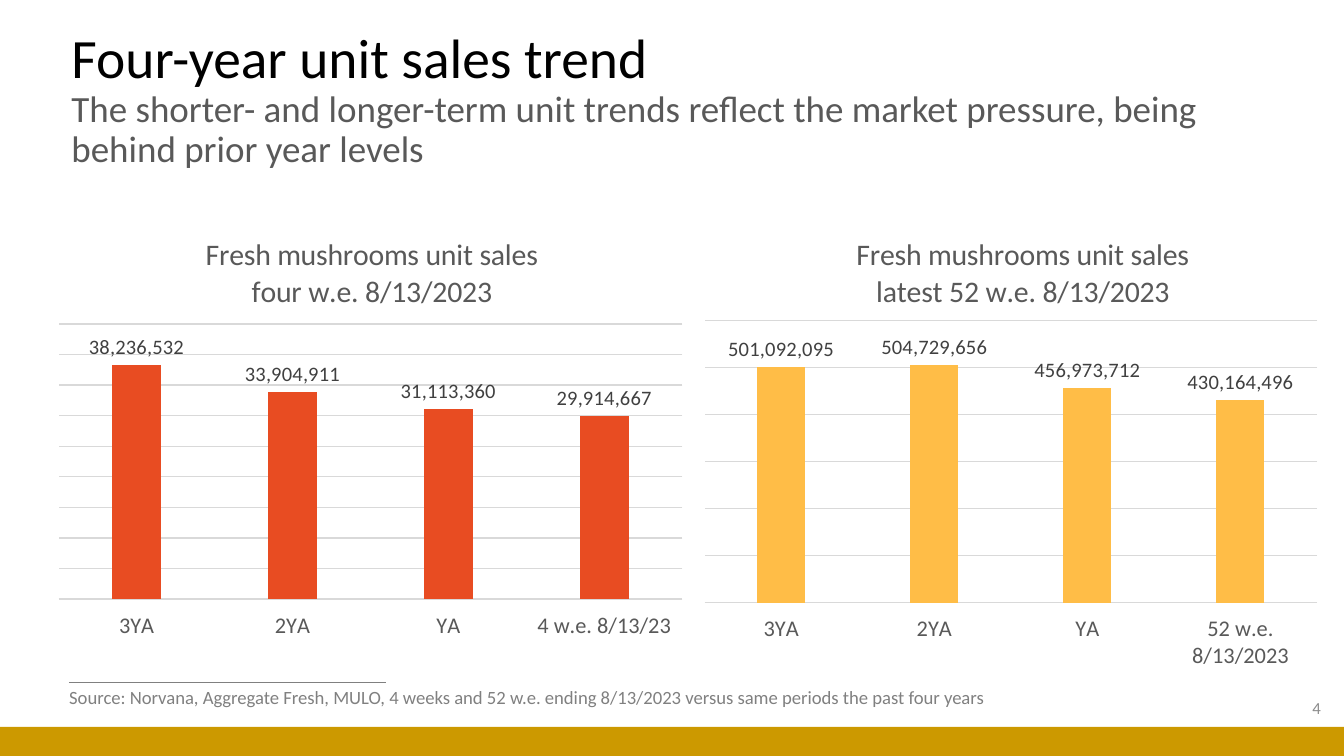
"""Build the four-year mushroom unit sales slide with two column charts."""
from dataclasses import dataclass

from lxml.etree import SubElement
from pptx import Presentation
from pptx.chart.data import CategoryChartData
from pptx.dml.color import RGBColor
from pptx.enum.chart import XL_CHART_TYPE, XL_LABEL_POSITION, XL_TICK_LABEL_POSITION, XL_TICK_MARK
from pptx.enum.shapes import MSO_CONNECTOR, MSO_SHAPE
from pptx.enum.text import MSO_ANCHOR, MSO_AUTO_SIZE, PP_ALIGN
from pptx.oxml.ns import qn
from pptx.util import Emu, Pt

TITLE = "Four-year unit sales trend"
SUBTITLE = ("The shorter- and longer-term unit trends reflect the market pressure, "
            "being behind prior year levels")
SOURCE = ("Source: Norvana, Aggregate Fresh, MULO, 4 weeks and 52 w.e. ending 8/13/2023 "
          "versus same periods the past four years")
PAGE_NUMBER = "4"
CHARTS = [
    {"title": "Fresh mushrooms unit sales\nfour w.e. 8/13/2023",
     "categories": ["3YA", "2YA", "YA", "4 w.e. 8/13/23"],
     "values": [38236532, 33904911, 31113360, 29914667],
     "color": "E84C22", "maximum": 45_000_000, "step": 5_000_000,
     "box": (58, 208, 625, 445), "plot": (58, 324, 625, 275), "title_at": (201, 231)},
    {"title": "Fresh mushrooms unit sales\nlatest 52 w.e. 8/13/2023",
     "categories": ["3YA", "2YA", "YA", "52 w.e. 8/13/2023"],
     "values": [501092095, 504729656, 456973712, 430164496],
     "color": "FFBD47", "maximum": 600_000_000, "step": 100_000_000,
     "box": (704, 208, 634, 470), "plot": (704, 321, 613, 282), "title_at": (852, 231)},
]


@dataclass(frozen=True)
class Theme:
    """Fonts, colours and type sizes of the slide."""
    font: str = "Calibri"
    title: str = "000000"
    muted: str = "595959"
    label: str = "404040"
    source: str = "808080"
    number: str = "8C8C8C"
    grid: str = "D9D9D9"
    band: str = "CC9900"
    title_size: float = 29.7
    subtitle_size: float = 19.8
    chart_title_size: int = 16
    axis_size: int = 12
    label_size: int = 11
    source_size: int = 10
    number_size: int = 9


THEME = Theme()
EMU_PER_PX = 914400 / 134.4


def px(*lengths):
    return [Emu(round(length * EMU_PER_PX)) for length in lengths]


def style_font(font, size, color):
    font.name = THEME.font
    font.size = Pt(size)
    font.bold = False
    font.color.rgb = RGBColor.from_string(color)


def style_line(line, color, width):
    line.color.rgb = RGBColor.from_string(color)
    line.width = Pt(width)


def add_title(slide):
    title = slide.shapes.title
    title.left, title.top, title.width, title.height = px(58, 48, 1218, 106)
    frame = title.text_frame
    frame.text = f"{TITLE}\v{SUBTITLE}"
    frame.word_wrap = True
    frame.auto_size = MSO_AUTO_SIZE.NONE
    frame.vertical_anchor = MSO_ANCHOR.MIDDLE
    paragraph = frame.paragraphs[0]
    paragraph.alignment = PP_ALIGN.LEFT
    paragraph.line_spacing = 0.9
    heading, subtitle = paragraph.runs
    style_font(heading.font, THEME.title_size, THEME.title)
    style_font(subtitle.font, THEME.subtitle_size, THEME.muted)
    line_break = paragraph._p.find(qn("a:br"))
    SubElement(line_break, qn("a:rPr"), sz=str(round(THEME.title_size * 100)))


def add_label(slide, box, text, size, color, alignment, anchor):
    frame = slide.shapes.add_textbox(*px(*box)).text_frame
    frame.text = text
    frame.word_wrap = True
    frame.vertical_anchor = anchor
    frame.paragraphs[0].alignment = alignment
    style_font(frame.paragraphs[0].runs[0].font, size, color)


def add_footer(slide):
    rule = slide.shapes.add_connector(MSO_CONNECTOR.STRAIGHT, *px(69, 683, 386, 683))
    style_line(rule.line, THEME.source, 0.5)
    SubElement(rule._element.spPr, qn("a:effectLst"))
    band = slide.shapes.add_shape(MSO_SHAPE.RECTANGLE, *px(0, 727, 1344, 29))
    band.shadow.inherit = False
    band.fill.solid()
    band.fill.fore_color.rgb = RGBColor.from_string(THEME.band)
    band.line.fill.background()
    add_label(slide, (1032, 688, 302, 40), PAGE_NUMBER, THEME.number_size, THEME.number,
              PP_ALIGN.RIGHT, MSO_ANCHOR.MIDDLE)
    add_label(slide, (56, 679, 954, 36), SOURCE, THEME.source_size, THEME.source,
              PP_ALIGN.LEFT, MSO_ANCHOR.TOP)


def place_in_chart(element, index, settings):
    for layout in element.findall(qn("c:layout")):
        element.remove(layout)
    layout = element.makeelement(qn("c:layout"))
    element.insert(index, layout)
    manual = SubElement(layout, qn("c:manualLayout"))
    for tag, value in settings.items():
        SubElement(manual, qn(f"c:{tag}"), val=str(value))


def relative_place(area, box):
    left, top, width, height = box
    place = {"xMode": "edge", "yMode": "edge",
             "x": round((area[0] - left) / width, 3), "y": round((area[1] - top) / height, 3)}
    if len(area) == 4:
        place |= {"w": round(area[2] / width, 3), "h": round(area[3] / height, 3)}
    return place


def add_sales_chart(slide, content):
    data = CategoryChartData(number_format="#,##0")
    data.categories = content["categories"]
    data.add_series("Series 1", content["values"])
    box = content["box"]
    chart = slide.shapes.add_chart(XL_CHART_TYPE.COLUMN_CLUSTERED, *px(*box), data).chart
    style_font(chart.font, THEME.source_size, THEME.title)
    chart.has_legend = False
    chart.has_title = True
    chart.chart_title.text_frame.text = content["title"]
    for paragraph in chart.chart_title.text_frame.paragraphs:
        paragraph.alignment = PP_ALIGN.CENTER
        style_font(paragraph.runs[0].font, THEME.chart_title_size, THEME.muted)

    category_axis = chart.category_axis
    category_axis.major_tick_mark = XL_TICK_MARK.NONE
    category_axis.tick_label_position = XL_TICK_LABEL_POSITION.LOW
    style_font(category_axis.tick_labels.font, THEME.axis_size, THEME.muted)
    style_line(category_axis.format.line, THEME.grid, 0.75)

    value_axis = chart.value_axis
    value_axis.visible = False
    value_axis.minimum_scale = 0
    value_axis.maximum_scale = content["maximum"]
    value_axis.major_unit = content["step"]
    value_axis.has_major_gridlines = True
    style_line(value_axis.major_gridlines.format.line, THEME.grid, 0.75)

    plot = chart.plots[0]
    plot.gap_width = 219
    plot.overlap = -27
    plot.vary_by_categories = False
    series = plot.series[0]
    series.format.fill.solid()
    series.format.fill.fore_color.rgb = RGBColor.from_string(content["color"])
    labels = series.data_labels
    labels.show_value = True
    labels.position = XL_LABEL_POSITION.OUTSIDE_END
    labels.number_format = "#,##0"
    labels.number_format_is_linked = False
    style_font(labels.font, THEME.label_size, THEME.label)

    root = chart._chartSpace
    place_in_chart(root.find(f".//{qn('c:title')}"), 1, relative_place(content["title_at"], box))
    place_in_chart(root.find(f".//{qn('c:plotArea')}"), 0,
                   {"layoutTarget": "inner"} | relative_place(content["plot"], box))


def main():
    presentation = Presentation()
    presentation.slide_width, presentation.slide_height = px(1344, 756)
    slide = presentation.slides.add_slide(presentation.slide_layouts[5])
    add_title(slide)
    add_footer(slide)
    for content in CHARTS:
        add_sales_chart(slide, content)
    presentation.save("out.pptx")


if __name__ == "__main__":
    main()
